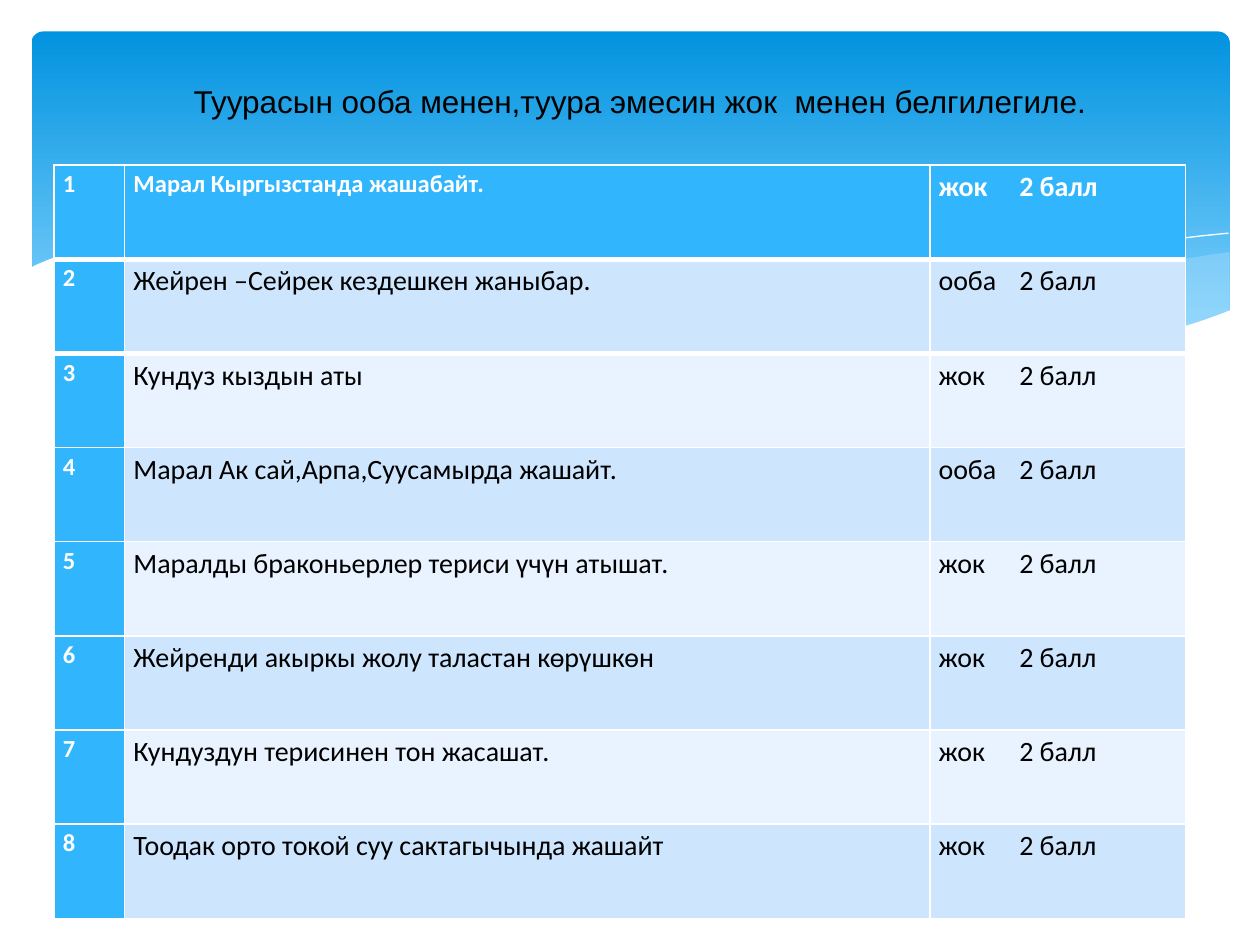
from lxml import etree
from pptx import Presentation
from pptx.dml.color import RGBColor
from pptx.enum.shapes import MSO_SHAPE
from pptx.enum.text import MSO_ANCHOR, MSO_AUTO_SIZE, PP_ALIGN
from pptx.oxml.ns import qn
from pptx.util import Inches, Pt

ROUNDED = MSO_SHAPE.ROUNDED_RECTANGLE
MIDDLE = MSO_ANCHOR.MIDDLE
GROW = MSO_AUTO_SIZE.SHAPE_TO_FIT_TEXT
CENTER = PP_ALIGN.CENTER

TITLE_ONLY = 5
CURVE_STEPS = 16
WHITE, BLACK, PALE = "FFFFFF", "000000", "C6E7FC"
ACCENT, BAND_DARK, BAND_LIGHT = "31B6FD", "CEE5FE", "E8F3FF"


def rgb(value):
    return RGBColor.from_string(value)


def bezier(start, pull_start, pull_end, end):
    """Return points along a cubic curve, in inches."""
    points = []
    for step in range(CURVE_STEPS + 1):
        t = step / CURVE_STEPS
        weights = ((1 - t) ** 3, 3 * t * (1 - t) ** 2, 3 * t ** 2 * (1 - t), t ** 3)
        points.append(tuple(
            sum(weight * value for weight, value in zip(weights, values))
            for values in zip(start, pull_start, pull_end, end)))
    return points


deck = Presentation()
deck.slide_width, deck.slide_height = Inches(10), Inches(7.5)
slide = deck.slides.add_slide(deck.slide_layouts[TITLE_ONLY])

# Blue banner
banner = slide.shapes.add_shape(ROUNDED, Inches(0.25), Inches(0.25), Inches(9.51), Inches(2.7))
banner.adjustments[0] = 0.034
banner.shadow.inherit = False
banner.line.fill.background()
banner.fill.gradient()
banner.fill.gradient_angle = 270
for stop, color, position in zip(banner.fill.gradient_stops, ("0293E0", "83D3FE"), (0, 0.9)):
    stop.color.rgb = rgb(color)
    stop.position = position

# Each wave outline is a chain of curves
right_wave = (bezier((6.61, 2.65), (7.8, 2.42), (8.9, 2.11), (9.76, 2))
              + bezier((9.76, 2.47), (8.9, 2.82), (7.9, 2.84), (6.61, 2.65)))
left_wave = (bezier((8.93, 2.73), (6.6, 2.5), (5.2, 1.6), (2.86, 1.91))
             + bezier((2.86, 1.91), (4.8, 2.1), (6.3, 3), (8.93, 2.73)))
long_crest = bezier((3.09, 1.95), (5, 1.65), (7, 2.15), (9.07, 2.72))
short_crest = bezier((6.13, 2.57), (7.5, 2.22), (8.6, 1.96), (9.75, 1.85))
white_wave = (bezier((0.23, 2.13), (0.6, 1.94), (1.2, 1.84), (1.93, 1.84))
              + bezier((1.93, 1.84), (4, 1.84), (6, 2.77), (8.09, 2.77))
              + bezier((8.09, 2.77), (8.7, 2.77), (9.25, 2.67), (9.77, 2.46))
              + [(9.77, 3.29), (0.23, 3.29)])

# Outline, fill colour (None for an open hairline) and opacity in percent
waves = [
    (right_wave, PALE, 29),
    (left_wave, PALE, 40),
    (long_crest, None, 100),
    (short_crest, None, 100),
    (white_wave, WHITE, 100),
]
for outline, fill, opacity in waves:
    corners = [(Inches(x), Inches(y)) for x, y in outline]
    builder = slide.shapes.build_freeform(*corners[0])
    builder.add_line_segments(corners[1:], close=fill is not None)
    wave = builder.convert_to_shape()
    wave.shadow.inherit = False
    if fill is None:
        wave.fill.background()
        wave.line.color.rgb = rgb(WHITE)
        wave.line.width = Pt(0)
    else:
        wave.line.fill.background()
        wave.fill.solid()
        wave.fill.fore_color.rgb = rgb(fill)
        color = wave.element.spPr.find(qn("a:solidFill")).find(qn("a:srgbClr"))
        etree.SubElement(color, qn("a:alpha"), val=str(opacity * 1000))

# Statements and answers
statements = [
    ("Марал Кыргызстанда жашабайт.", "жок"),
    ("Жейрен –Сейрек кездешкен жаныбар.", "ооба"),
    ("Кундуз кыздын аты", "жок"),
    ("Марал Ак сай,Арпа,Суусамырда жашайт.", "ооба"),
    ("Маралды браконьерлер териси үчүн атышат.", "жок"),
    ("Жейренди акыркы жолу таластан кѳрүшкѳн", "жок"),
    ("Кундуздун терисинен тон жасашат.", "жок"),
    ("Тоодак орто токой суу сактагычында жашайт", "жок"),
]
NUMBER, STATEMENT, ANSWER = range(3)
HEADER_EDGES = {0: "a:lnB", 1: "a:lnT"}  # the thick rule between rows 0 and 1

table = slide.shapes.add_table(
    len(statements), 3, Inches(0.43), Inches(1.31), Inches(8.98), Inches(5.98)
).table
table.first_col = True
for column, width in zip(table.columns, (0.56, 6.39, 2.03)):
    column.width = Inches(width)

for row, (statement, answer) in enumerate(statements):
    texts = (str(row + 1), statement, f"{answer}\t2 балл")
    for column, text in enumerate(texts):
        cell = table.cell(row, column)
        is_heading = row == 0 or column == NUMBER
        is_small = column == NUMBER or (row == 0 and column == STATEMENT)
        band = BAND_DARK if row % 2 else BAND_LIGHT
        cell.margin_left = cell.margin_right = Inches(0.07)
        cell.margin_top = cell.margin_bottom = 0
        if row in HEADER_EDGES:
            edge = etree.SubElement(
                cell._tc.get_or_add_tcPr(), qn(HEADER_EDGES[row]), w=str(Pt(3)))
            edge_fill = etree.SubElement(edge, qn("a:solidFill"))
            etree.SubElement(edge_fill, qn("a:srgbClr"), val=WHITE)
        cell.fill.solid()
        cell.fill.fore_color.rgb = rgb(ACCENT if is_heading else band)

        para = cell.text_frame.paragraphs[0]
        para.text = text
        para.line_spacing = 1.15
        if column == ANSWER:
            tabs = etree.SubElement(para._p.get_or_add_pPr(), qn("a:tabLst"))
            etree.SubElement(tabs, qn("a:tab"), pos=str(Inches(0.64)), algn="l")
        para.font.name = "Calibri"
        para.font.size = Pt(14 if is_small else 16)
        para.font.bold = is_heading
        para.font.color.rgb = rgb(WHITE if is_heading else BLACK)

# Title, brought in front of the banner
title = slide.shapes.title
title.left, title.top = Inches(0.75), Inches(0.6)
title.width, title.height = Inches(8.66), Inches(0.4)
title.element.getparent().append(title.element)
frame = title.text_frame
frame.text = "Туурасын ооба менен,туура эмесин жок  менен белгилегиле."
frame.word_wrap = True
frame.auto_size = GROW
frame.vertical_anchor = MIDDLE
para = frame.paragraphs[0]
para.alignment = CENTER
para.font.name = "Arial"
para.font.size = Pt(18)
para.font.color.rgb = rgb(BLACK)

deck.save("out.pptx")
